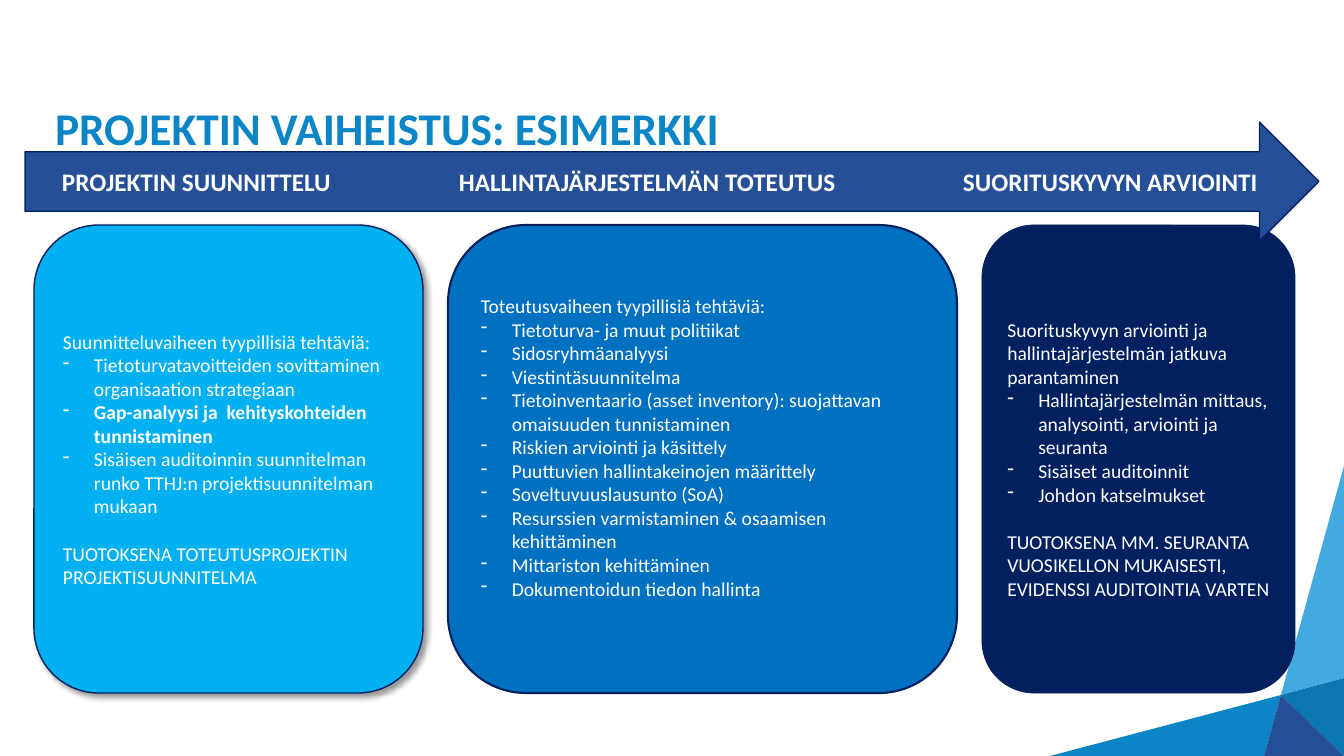
from dataclasses import dataclass

from lxml.etree import SubElement
from pptx import Presentation
from pptx.dml.color import RGBColor
from pptx.enum.shapes import MSO_SHAPE
from pptx.enum.text import MSO_ANCHOR, PP_ALIGN
from pptx.oxml.ns import qn
from pptx.util import Pt

SLIDE_W, SLIDE_H = 1344, 756
EMU_PER_PX = 12192000 / SLIDE_W

SKY, BLUE, TEAL, INDIGO = "43AAE0", "0B85C6", "0A76B2", "254F97"
NAVY, WHITE = "002060", "FFFFFF"

BOX_TOP, BOX_H = 225, 468
INSET, LINE_H, BULLET_INDENT = 10, 24, 31
ARROW_LEFT = 25
HEADING_X = (62, 459, 963)
CORNER_HUB = (1281, 695)


@dataclass
class Facet:
    color: str
    start: tuple[int, int]
    end: tuple[int, int]


@dataclass
class Phase:
    heading: str
    left: int
    width: int
    fill: str
    line_pt: float
    intro: str
    tasks: list[str]
    outcome: str = ""
    bold_task: int = -1
    shadow: bool = False


FACETS = [
    Facet(SKY, (1344, 466), (1344, 678)),
    Facet(BLUE, (1050, 756), (1264, 756)),
    Facet(TEAL, (1344, 678), (1344, 756)),
    Facet(INDIGO, (1264, 756), (1344, 756)),
]

PHASES = [
    Phase("PROJEKTIN SUUNNITTELU", 34, 389, "00B0F0", 1,
          "Suunnitteluvaiheen tyypillisiä tehtäviä:",
          ["Tietoturvatavoitteiden sovittaminen organisaation strategiaan",
           "Gap-analyysi ja  kehityskohteiden tunnistaminen",
           "Sisäisen auditoinnin suunnitelman runko TTHJ:n projektisuunnitelman mukaan"],
          "TUOTOKSENA TOTEUTUSPROJEKTIN PROJEKTISUUNNITELMA",
          bold_task=1, shadow=True),
    Phase("HALLINTAJÄRJESTELMÄN TOTEUTUS", 448, 509, "0070C0", 1.5,
          "Toteutusvaiheen tyypillisiä tehtäviä:",
          ["Tietoturva- ja muut politiikat",
           "Sidosryhmäanalyysi",
           "Viestintäsuunnitelma",
           "Tietoinventaario (asset inventory): suojattavan omaisuuden tunnistaminen",
           "Riskien arviointi ja käsittely",
           "Puuttuvien hallintakeinojen määrittely",
           "Soveltuvuuslausunto (SoA)",
           "Resurssien varmistaminen & osaamisen kehittäminen",
           "Mittariston kehittäminen",
           "Dokumentoidun tiedon hallinta"]),
    Phase("SUORITUSKYVYN ARVIOINTI", 982, 313, NAVY, 0.5,
          "Suorituskyvyn arviointi ja hallintajärjestelmän jatkuva parantaminen",
          ["Hallintajärjestelmän mittaus, analysointi, arviointi ja seuranta",
           "Sisäiset auditoinnit",
           "Johdon katselmukset"],
          "TUOTOKSENA MM. SEURANTA VUOSIKELLON MUKAISESTI, EVIDENSSI AUDITOINTIA VARTEN"),
]


def px(n: float) -> int:
    return round(n * EMU_PER_PX)


def rgb(color: str) -> RGBColor:
    return RGBColor.from_string(color)


def setup_text(sp, left: int = INSET, right: int = INSET, bottom: int = 5):
    tf = sp.text_frame
    tf.word_wrap = True
    tf.vertical_anchor = MSO_ANCHOR.MIDDLE
    tf.margin_left, tf.margin_right = px(left), px(right)
    tf.margin_top, tf.margin_bottom = px(5), px(bottom)
    return tf


def add_text(p, text: str, *, size: float = 14, color: str = WHITE, bold: bool = False) -> None:
    p.alignment = PP_ALIGN.LEFT
    r = p.add_run()
    r.text = text
    r.font.name = "Calibri"
    r.font.size = Pt(size)
    r.font.bold = bold
    r.font.color.rgb = rgb(color)


def add_dash(p) -> None:
    pPr = p._p.get_or_add_pPr()
    pPr.set("marL", str(px(BULLET_INDENT)))
    pPr.set("indent", str(-px(BULLET_INDENT)))
    SubElement(pPr, qn("a:buChar"), char="-")


def add_tabs(p, stops: list[int]) -> None:
    tabs = SubElement(p._p.get_or_add_pPr(), qn("a:tabLst"))
    for stop in stops:
        SubElement(tabs, qn("a:tab"), pos=str(px(stop)), algn="l")


def add_shadow(sp) -> None:
    effects = sp._element.spPr.find(qn("a:effectLst"))
    shadow = SubElement(effects, qn("a:outerShdw"), blurRad=str(Pt(4)), dist=str(Pt(3)),
                        dir="2700000", algn="tl", rotWithShape="0")
    color = SubElement(shadow, qn("a:srgbClr"), val="000000")
    SubElement(color, qn("a:alpha"), val="40000")


def add_outlined(slide, kind: MSO_SHAPE, box: tuple[int, ...], fill: str, line_pt: float):
    sp = slide.shapes.add_shape(kind, *map(px, box))
    sp.shadow.inherit = False
    sp.fill.solid()
    sp.fill.fore_color.rgb = rgb(fill)
    sp.line.color.rgb = rgb(NAVY)
    sp.line.width = Pt(line_pt)
    return sp


def add_facet(slide, facet: Facet) -> None:
    builder = slide.shapes.build_freeform(*facet.start, scale=EMU_PER_PX)
    builder.add_line_segments([facet.end, CORNER_HUB], close=True)
    sp = builder.convert_to_shape()
    sp.shadow.inherit = False
    sp.fill.solid()
    sp.fill.fore_color.rgb = rgb(facet.color)
    sp.line.fill.background()


def add_title(slide, text: str) -> None:
    sp = slide.shapes.add_textbox(*map(px, (45, 103, 1246, 55)))
    p = setup_text(sp).paragraphs[0]
    p.line_spacing = 0.9
    add_text(p, text, size=32.4, color=BLUE, bold=True)


def add_phase(slide, phase: Phase) -> None:
    sp = add_outlined(slide, MSO_SHAPE.ROUNDED_RECTANGLE,
                      (phase.left, BOX_TOP, phase.width, BOX_H), phase.fill, phase.line_pt)
    if phase.shadow:
        add_shadow(sp)
    tf = setup_text(sp, right=8, bottom=5 if phase.outcome else 5 + LINE_H)
    add_text(tf.paragraphs[0], phase.intro)
    for i, task in enumerate(phase.tasks):
        p = tf.add_paragraph()
        add_dash(p)
        add_text(p, task, bold=i == phase.bold_task)
    if phase.outcome:
        p = tf.add_paragraph()
        p.space_before = Pt(17)
        add_text(p, phase.outcome)


def add_timeline(slide) -> None:
    """Draw the arrow whose phase headings stand on tab stops."""
    sp = add_outlined(slide, MSO_SHAPE.RIGHT_ARROW, (ARROW_LEFT, 122, 1294, 119), INDIGO, 1)
    first, *others = HEADING_X
    p = setup_text(sp, left=first - ARROW_LEFT).paragraphs[0]
    add_tabs(p, [x - first for x in others])
    add_text(p, "\t".join(phase.heading for phase in PHASES), size=18, bold=True)


def main() -> None:
    prs = Presentation()
    prs.slide_width, prs.slide_height = px(SLIDE_W), px(SLIDE_H)
    slide = prs.slides.add_slide(prs.slide_layouts[6])
    for facet in FACETS:
        add_facet(slide, facet)
    add_title(slide, "PROJEKTIN VAIHEISTUS: ESIMERKKI")
    for phase in PHASES:
        add_phase(slide, phase)
    add_timeline(slide)
    prs.save("out.pptx")


if __name__ == "__main__":
    main()
